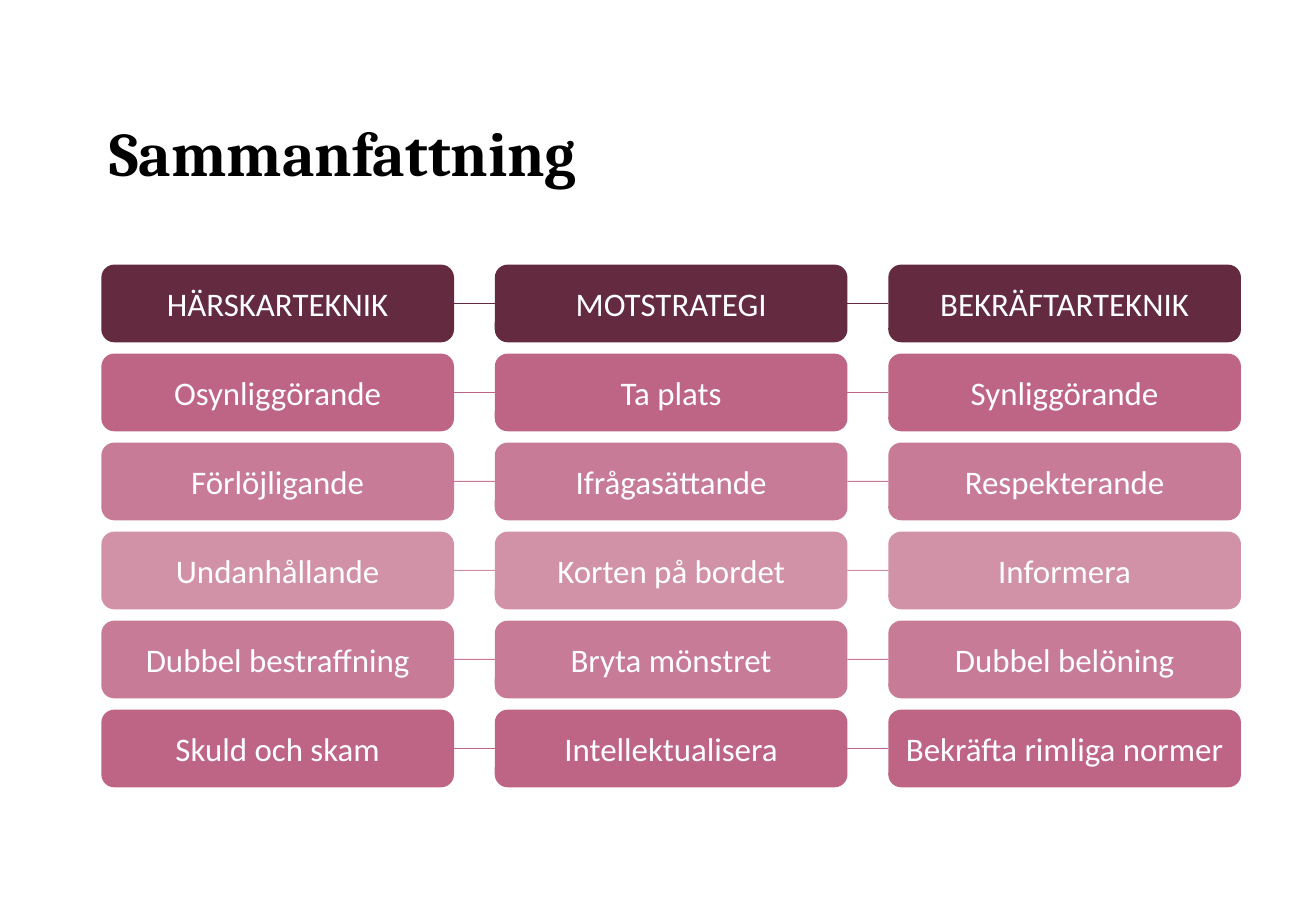
from dataclasses import dataclass

from lxml import etree
from pptx import Presentation
from pptx.dml.color import RGBColor
from pptx.enum.shapes import MSO_CONNECTOR, MSO_SHAPE
from pptx.enum.text import MSO_ANCHOR, PP_ALIGN
from pptx.oxml.ns import qn
from pptx.util import Inches, Pt

ROUND = MSO_SHAPE.ROUNDED_RECTANGLE
STRAIGHT = MSO_CONNECTOR.STRAIGHT
MIDDLE, BOTTOM = MSO_ANCHOR.MIDDLE, MSO_ANCHOR.BOTTOM
CENTER = PP_ALIGN.CENTER
LEFT_SIDE, RIGHT_SIDE = 1, 3

COLORS = {"plum": "642A3F", "rose": "BE6484", "white": "FFFFFF", "black": "000000"}


@dataclass(frozen=True)
class Grid:
    left: float
    top: float
    col_step: float
    row_step: float
    width: float
    height: float

    def cell(self, col: int, row: int) -> list:
        return [Inches(n) for n in (self.left + col * self.col_step,
                                    self.top + row * self.row_step,
                                    self.width, self.height)]


@dataclass(frozen=True)
class Row:
    labels: tuple
    color: str = "rose"
    alpha: int = 100


# Six rows, the last starting at 5.39 inches
GRID = Grid(0.77, 2.01, 2.99, (5.39 - 2.01) / 5, 2.68, 0.59)

ROWS = [
    Row(("HÄRSKARTEKNIK", "MOTSTRATEGI", "BEKRÄFTARTEKNIK"), "plum"),
    Row(("Osynliggörande", "Ta plats", "Synliggörande")),
    Row(("Förlöjligande", "Ifrågasättande", "Respekterande"), alpha=85),
    Row(("Undanhållande", "Korten på bordet", "Informera"), alpha=70),
    Row(("Dubbel bestraffning", "Bryta mönstret", "Dubbel belöning"), alpha=85),
    Row(("Skuld och skam", "Intellektualisera", "Bekräfta rimliga normer")),
]


def rgb(name: str) -> RGBColor:
    return RGBColor.from_string(COLORS[name])


def paint(fill, holder, row: Row) -> None:
    """Fill with the row's colour and opacity; holder is the XML around the fill."""
    fill.solid()
    fill.fore_color.rgb = rgb(row.color)
    if row.alpha < 100:
        color = holder.find(qn("a:solidFill")).find(qn("a:srgbClr"))
        etree.SubElement(color, qn("a:alpha"), val=str(row.alpha * 1000))


def style(par, face: str, size: int, color: str, bold: bool = False) -> None:
    font = par.font
    font.name, font.size, font.bold = face, Pt(size), bold
    font.color.rgb = rgb(color)


def add_title(slide, text: str) -> None:
    box = slide.shapes.add_textbox(*map(Inches, (0.83, 0.5, 8.35, 0.94)))
    frame = box.text_frame
    frame.word_wrap = True
    frame.vertical_anchor = BOTTOM
    frame.margin_left = frame.margin_right = 0
    frame.margin_top = frame.margin_bottom = 0
    par = frame.paragraphs[0]
    par.text = text
    par.line_spacing = 0.9
    style(par, "Cambria", 34, "black", True)


def add_box(slide, col: int, index: int, row: Row):
    box = slide.shapes.add_shape(ROUND, *GRID.cell(col, index))
    box.shadow.inherit = False
    paint(box.fill, box.element.spPr, row)
    box.line.fill.background()
    frame = box.text_frame
    frame.word_wrap = True
    frame.vertical_anchor = MIDDLE
    par = frame.paragraphs[0]
    par.text = row.labels[col]
    par.alignment = CENTER
    style(par, "Calibri", 18, "white")
    return box


def link(slide, start, end, row: Row) -> None:
    line = slide.shapes.add_connector(STRAIGHT, 0, 0, 0, 0)
    line.begin_connect(start, RIGHT_SIDE)
    line.end_connect(end, LEFT_SIDE)
    line.line.width = Pt(0.5)
    props = line.element.spPr
    paint(line.line.fill, props.find(qn("a:ln")), row)
    etree.SubElement(props, qn("a:effectLst"))


def main() -> None:
    deck = Presentation()
    deck.slide_width, deck.slide_height = Inches(10), Inches(6.95)
    slide = deck.slides.add_slide(deck.slide_layouts[6])
    add_title(slide, "Sammanfattning")
    for index, row in enumerate(ROWS):
        boxes = [add_box(slide, col, index, row) for col in range(len(row.labels))]
        for start, end in zip(boxes, boxes[1:]):
            link(slide, start, end, row)
    deck.save("out.pptx")


if __name__ == "__main__":
    main()
